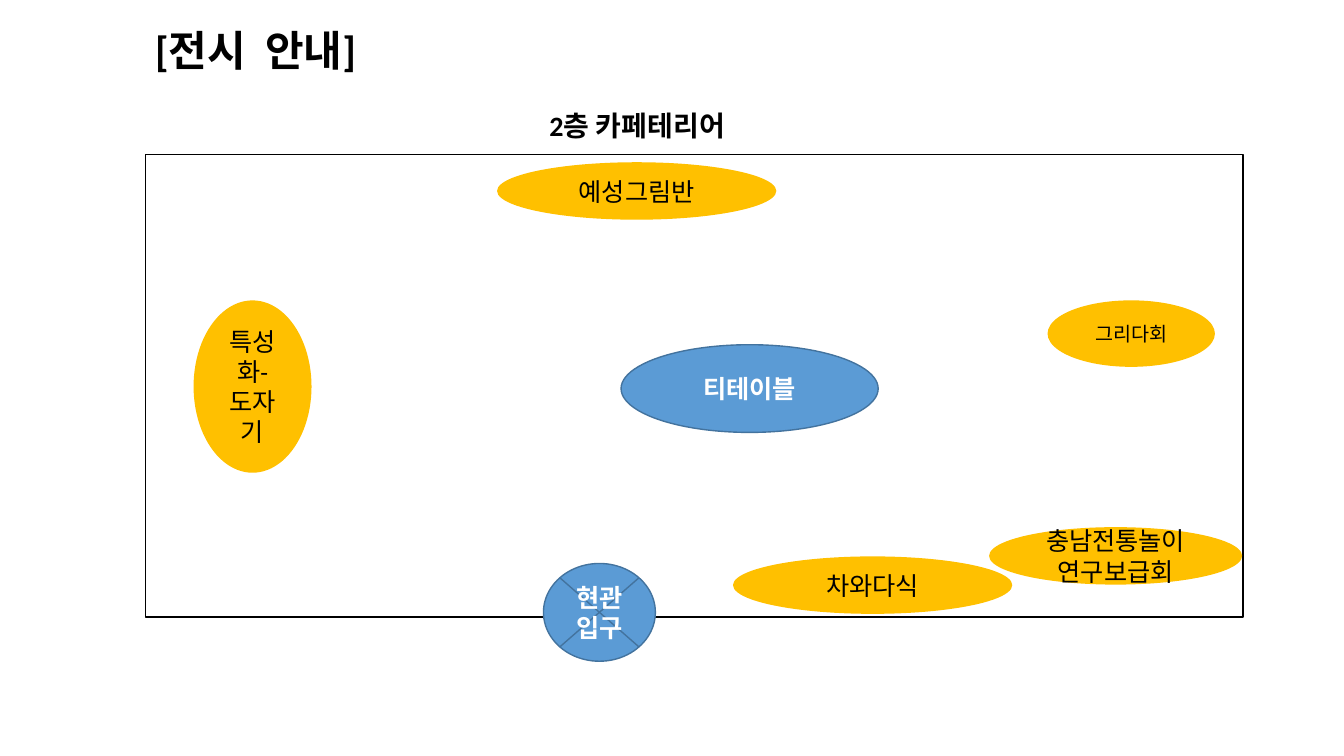
from dataclasses import dataclass
from pptx import Presentation
from pptx.dml.color import RGBColor
from pptx.enum import shapes, text
from pptx.util import Inches, Pt


@dataclass(frozen=True)
class Theme:
    font: str = "Calibri"
    black: str = "000000"
    white: str = "FFFFFF"
    gold: str = "FFC000"
    blue: str = "5B9BD5"
    edge: str = "43739E"
    title: int = 30
    head: int = 20
    body: int = 18
    small: int = 14


theme = Theme()
kind = shapes.MSO_SHAPE
align = text.PP_ALIGN

deck = Presentation()
deck.slide_width, deck.slide_height = Inches(13.33), Inches(7.5)
slide = deck.slides.add_slide(deck.slide_layouts[6])


def write(shape, words, size, color, bold, side):
    frame = shape.text_frame
    frame.text = words
    para = frame.paragraphs[0]
    para.alignment = side
    font = para.runs[0].font
    font.name, font.size, font.bold = theme.font, Pt(size), bold
    font.color.rgb = RGBColor.from_string(color)


def draw(form, box, fill, line=None):
    shape = slide.shapes.add_shape(form, *map(Inches, box))
    shape.shadow.inherit = False
    shape.fill.solid()
    shape.fill.fore_color.rgb = RGBColor.from_string(fill)
    if line:
        shape.line.color.rgb = RGBColor.from_string(line)
        shape.line.width = Pt(1)
    else:
        shape.line.fill.background()
    shape.text_frame.vertical_anchor = text.MSO_ANCHOR.MIDDLE
    shape.text_frame.word_wrap = True
    return shape


# Room outline
draw(kind.RECTANGLE, (1.44, 1.53, 10.89, 4.59), theme.white, theme.black)

# Entrance and tea table
marks = [
    ("현관입구", kind.FLOWCHART_SUMMING_JUNCTION, (5.39, 5.59, 1.11, 0.97)),
    ("티테이블", kind.OVAL, (6.16, 3.42, 2.55, 0.87)),
]
for words, form, box in marks:
    mark = draw(form, box, theme.blue, theme.edge)
    write(mark, words, theme.body, theme.white, True, align.CENTER)

# Exhibition booths
booths = [
    ("예성그림반", (4.93, 1.61, 2.77, 0.57), theme.body),
    ("특성화-도자기", (1.92, 2.98, 1.17, 1.71), theme.body),
    ("충남전통놀이 연구보급회", (9.81, 5.23, 2.51, 0.57), theme.body),
    ("그리다회", (10.39, 2.98, 1.66, 0.66), theme.small),
    ("차와다식", (7.27, 5.52, 2.77, 0.57), theme.body),
]
for words, box, size in booths:
    booth = draw(kind.OVAL, box, theme.gold)
    write(booth, words, size, theme.black, False, align.CENTER)

# Room name and slide title
heads = [
    ("2층 카페테리어", (2.79, 1.03, 7.06, 0.44), theme.head, True, align.CENTER),
    ("[전시  안내]", (1.44, 0.19, 2.44, 0.61), theme.title, False, align.LEFT),
]
for words, box, size, wrap, side in heads:
    label = slide.shapes.add_textbox(*map(Inches, box))
    label.text_frame.word_wrap = wrap
    label.text_frame.auto_size = text.MSO_AUTO_SIZE.SHAPE_TO_FIT_TEXT
    write(label, words, size, theme.black, True, side)

deck.save("out.pptx")
